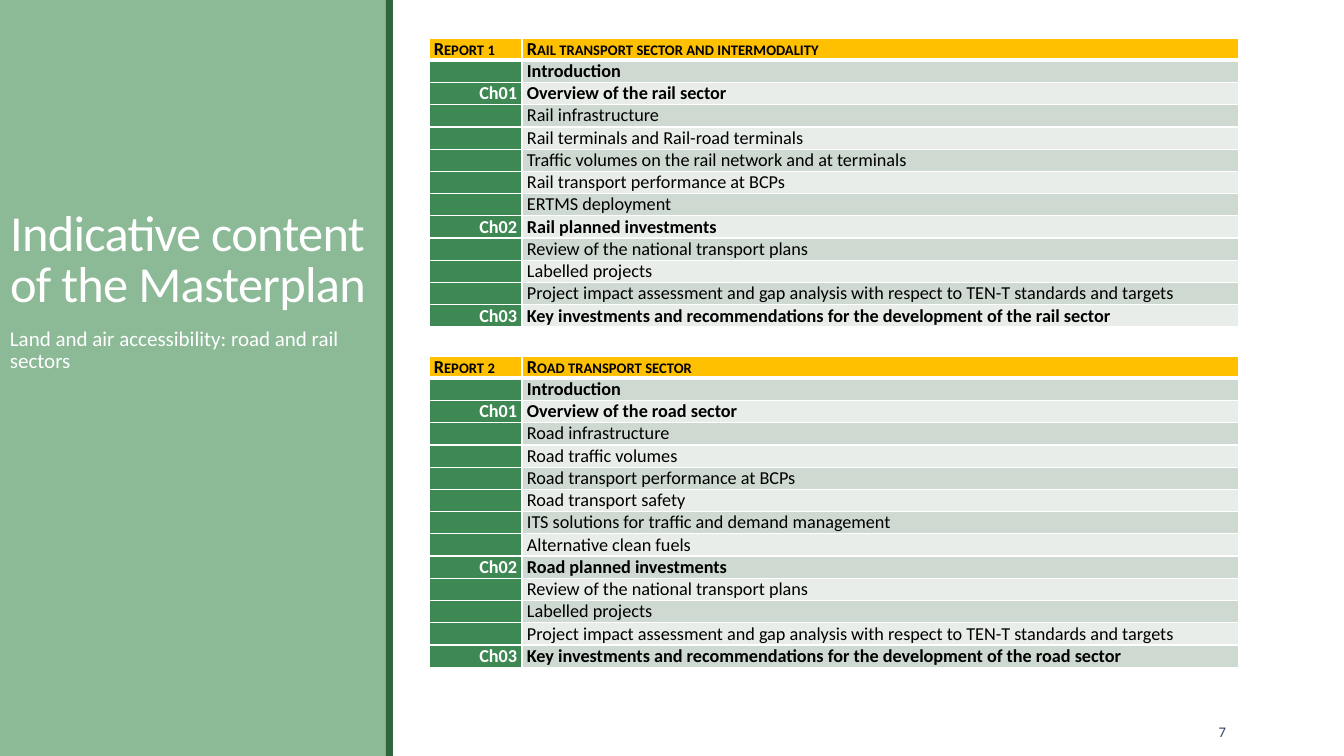
"""Build the slide on the indicative content of the Masterplan."""
from lxml import etree
from pptx import Presentation
from pptx.dml.color import RGBColor
from pptx.enum.shapes import MSO_SHAPE
from pptx.enum.text import MSO_ANCHOR, MSO_AUTO_SIZE, PP_ALIGN
from pptx.oxml.ns import qn
from pptx.util import Emu, Pt

RECTANGLE = MSO_SHAPE.RECTANGLE
LEFT, RIGHT = PP_ALIGN.LEFT, PP_ALIGN.RIGHT
TOP, MIDDLE, BOTTOM = MSO_ANCHOR.TOP, MSO_ANCHOR.MIDDLE, MSO_ANCHOR.BOTTOM
NO_AUTOFIT = MSO_AUTO_SIZE.NONE

PAGE_WIDTH, PAGE_HEIGHT = 1344, 756
EMU_PER_PX = 12192000 / PAGE_WIDTH
PANEL_WIDTH, STRIPE_WIDTH = 386, 7
TABLE_LEFT, ROW_HEIGHT, CELL_INSET = 429, 22, 5
COLUMN_WIDTHS = (93, 717)
TABLE_SIZE = 13

WHITE, BLACK = "FFFFFF", "000000"
PANEL, STRIPE, PAGE_NUMBER = "8CB996", "2F663E", "344068"
HEADER, CHAPTER = "FFC000", "3E8853"
BANDS = ("CEDAD1", "E8EDE9")

PLANS = [
    ("", "Review of the national transport plans"),
    ("", "Labelled projects"),
    ("", "Project impact assessment and gap analysis with respect to TEN-T standards and targets"),
]
RAIL_REPORT = [
    ("Report 1", "Rail transport sector and intermodality"),
    ("", "Introduction"),
    ("Ch01", "Overview of the rail sector"),
    ("", "Rail infrastructure"),
    ("", "Rail terminals and Rail-road terminals"),
    ("", "Traffic volumes on the rail network and at terminals"),
    ("", "Rail transport performance at BCPs"),
    ("", "ERTMS deployment"),
    ("Ch02", "Rail planned investments"),
    *PLANS,
    ("Ch03", "Key investments and recommendations for the development of the rail sector"),
]
ROAD_REPORT = [
    ("Report 2", "Road transport sector"),
    ("", "Introduction"),
    ("Ch01", "Overview of the road sector"),
    ("", "Road infrastructure"),
    ("", "Road traffic volumes"),
    ("", "Road transport performance at BCPs"),
    ("", "Road transport safety"),
    ("", "ITS solutions for traffic and demand management"),
    ("", "Alternative clean fuels"),
    ("Ch02", "Road planned investments"),
    *PLANS,
    ("Ch03", "Key investments and recommendations for the development of the road sector"),
]


def px(length):
    """Turn pixels into EMU."""
    return Emu(round(length * EMU_PER_PX))


def color(value):
    """Turn a hex string into a colour."""
    return RGBColor.from_string(value)


def style(para, size, hue, bold=False, align=LEFT):
    """Set the font and alignment of a paragraph."""
    para.alignment = align
    para.font.name = "Calibri"
    para.font.size = Pt(size)
    para.font.bold = bold
    para.font.color.rgb = color(hue)


def add_panel(page, left, width, hue):
    """Draw a full-height rectangle."""
    panel = page.shapes.add_shape(RECTANGLE, px(left), 0, px(width), px(PAGE_HEIGHT))
    panel.shadow.inherit = False
    panel.fill.solid()
    panel.fill.fore_color.rgb = color(hue)
    panel.line.fill.background()


def fill_text(box, text, size, hue, anchor=TOP, align=LEFT, spacing=None):
    """Write one wrapped paragraph into a box and return it."""
    frame = box.text_frame
    frame.word_wrap = True
    frame.auto_size = NO_AUTOFIT
    frame.vertical_anchor = anchor
    para = frame.paragraphs[0]
    para.text = text
    para.line_spacing = spacing
    style(para, size, hue, align=align)
    return para


def add_text(page, left, top, width, height, *content, **options):
    """Add a text box holding one paragraph."""
    box = page.shapes.add_textbox(px(left), px(top), px(width), px(height))
    fill_text(box, *content, **options)


def set_title(page):
    """Place the title above the side panel and format it."""
    title = page.shapes.title
    page.shapes.element.append(title.element)
    title.left, title.top, title.width, title.height = map(px, (0, 66, PANEL_WIDTH, 252))
    para = fill_text(title, "Indicative content of the Masterplan", 36, WHITE,
                     anchor=BOTTOM, spacing=0.85)
    para.runs[0].font._element.set("spc", "-50")


def set_borders(cell, top, bottom):
    """Give a cell white borders, with widths in points."""
    properties = cell._tc.get_or_add_tcPr()
    for side, width in (("L", 1), ("R", 1), ("T", top), ("B", bottom)):
        line = etree.SubElement(properties, qn(f"a:ln{side}"), w=str(Pt(width)))
        solid = etree.SubElement(line, qn("a:solidFill"))
        etree.SubElement(solid, qn("a:srgbClr"), val=WHITE)


def fill_cell(cell, text, fill, hue, bold, align):
    """Write and colour one table cell."""
    cell.margin_left = cell.margin_right = px(CELL_INSET)
    cell.margin_top = cell.margin_bottom = 0
    cell.fill.solid()
    cell.fill.fore_color.rgb = color(fill)
    para = cell.text_frame.paragraphs[0]
    if text:
        para.text = text
    else:
        etree.SubElement(para._p, qn("a:endParaRPr"), sz=str(TABLE_SIZE * 100))
    style(para, TABLE_SIZE, hue, bold, align)


def add_report(page, top, rows):
    """Add the table of contents of one report."""
    frame = page.shapes.add_table(len(rows), len(COLUMN_WIDTHS), px(TABLE_LEFT), px(top),
                                  px(sum(COLUMN_WIDTHS)), px(ROW_HEIGHT * len(rows)))
    table = frame.table
    table.first_row = table.horz_banding = False
    for column, width in zip(table.columns, COLUMN_WIDTHS):
        column.width = px(width)
    for index, (chapter, topic) in enumerate(rows):
        table.rows[index].height = px(ROW_HEIGHT)
        label, entry = table.rows[index].cells
        for cell in (label, entry):
            set_borders(cell, 3 if index == 1 else 1, 3 if index == 0 else 1)
        if index == 0:
            for cell, text in ((label, chapter), (entry, topic)):
                fill_cell(cell, text, HEADER, BLACK, True, LEFT)
                cell.text_frame.paragraphs[0].runs[0].font._element.set("cap", "small")
        else:
            bold = bool(chapter) or topic == "Introduction"
            fill_cell(label, chapter, CHAPTER, WHITE, True, RIGHT)
            fill_cell(entry, topic, BANDS[(index - 1) % 2], BLACK, bold, LEFT)


def main():
    """Build and save the deck."""
    deck = Presentation()
    deck.slide_width, deck.slide_height = px(PAGE_WIDTH), px(PAGE_HEIGHT)
    page = deck.slides.add_slide(deck.slide_layouts.get_by_name("Title Only"))
    add_panel(page, 0, PANEL_WIDTH, PANEL)
    add_panel(page, PANEL_WIDTH, STRIPE_WIDTH, STRIPE)
    set_title(page)
    add_text(page, 0, 323, PANEL_WIDTH, 373,
             "Land and air accessibility: road and rail sectors", 15, WHITE, spacing=0.9)
    add_text(page, 1092, 712, 144, 40, "7", 10.5, PAGE_NUMBER, anchor=MIDDLE, align=RIGHT)
    add_report(page, 38, RAIL_REPORT)
    add_report(page, 356, ROAD_REPORT)
    deck.save("out.pptx")


if __name__ == "__main__":
    main()
